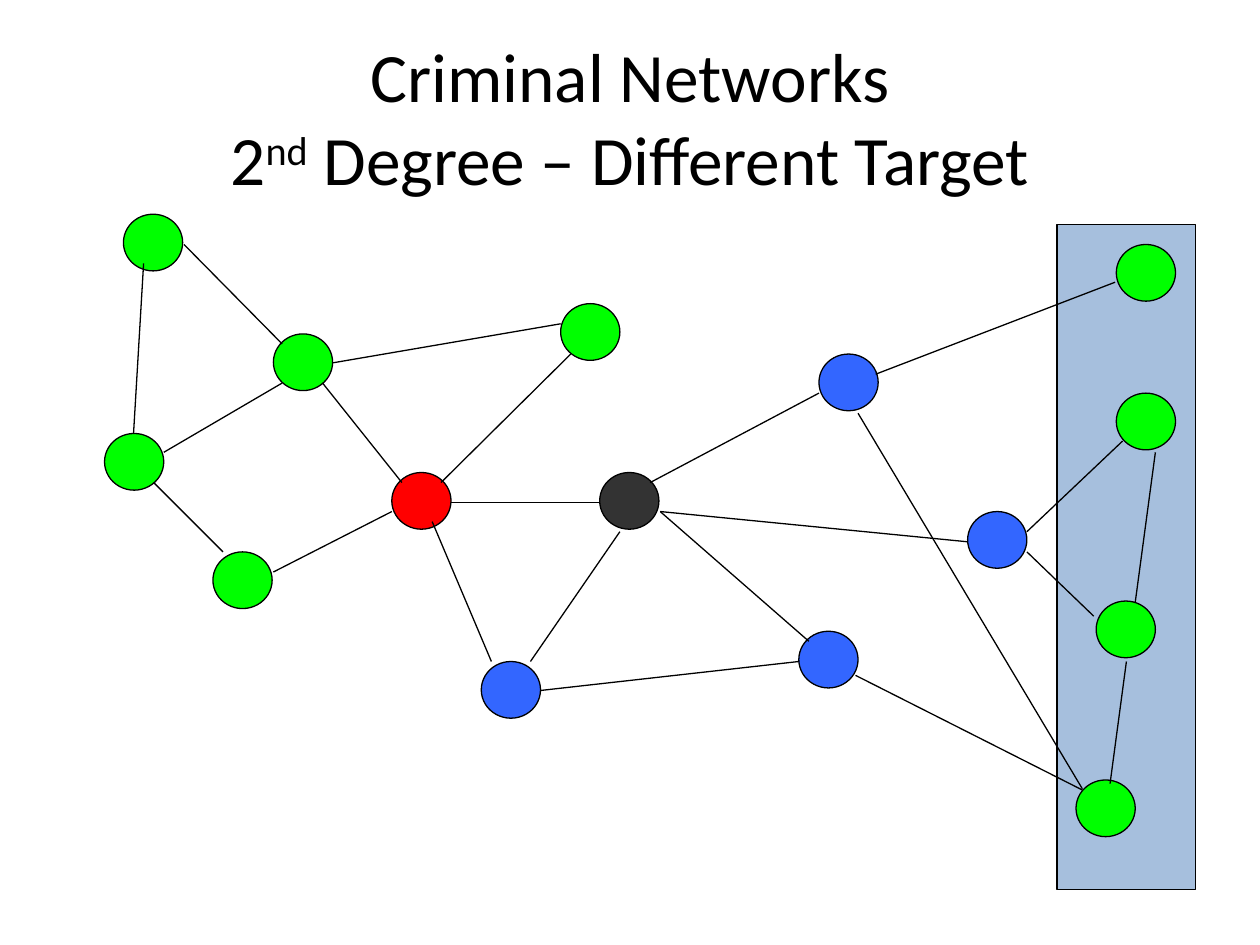
import pptx
import pptx.dml.color
import pptx.enum.shapes
import pptx.enum.text
import pptx.oxml.ns
import pptx.oxml.xmlchemy
import pptx.util
from pptx.util import Inches

BLACK, GREEN, BLUE, RED, CHARCOAL = "000000", "00FF00", "3366FF", "FF0000", "333333"
PANEL_BLUE = "4F81BD"
NODE_WIDTH, NODE_HEIGHT = 0.47, 0.45

# Left and top of each node, from the corner of its box
CORE_NODES = {
    RED: [(2.61, 2.25)],
    CHARCOAL: [(4.26, 2.25)],
    GREEN: [(1.67, 1.15), (1.19, 2.88), (3.95, 0.91), (0.33, 1.94), (0.48, 0.2)],
    BLUE: [(3.32, 3.75), (7.18, 2.56), (5.84, 3.51), (6, 1.31)],
}
TARGET_NODES = {GREEN: [(0.47, 0.16), (0.47, 1.34), (0.31, 2.99), (0.15, 4.41)]}

# Start x, start y, end x, end y, from the corner of the network box
CORE_LINKS = [
    (2.69, 2.33, 2.06, 1.54), (3, 2.33, 4.03, 1.31), (3.08, 2.49, 4.26, 2.49),
    (2.93, 2.64, 3.4, 3.75), (2.61, 2.56, 1.67, 3.04), (4.42, 2.72, 3.71, 3.75),
    (3.95, 1.07, 2.14, 1.38), (1.27, 2.88, 0.72, 2.33), (1.74, 1.54, 0.8, 2.09),
    (0.56, 1.94, 0.64, 0.59), (0.96, 0.44, 1.74, 1.23), (3.79, 3.98, 5.84, 3.75),
    (4.66, 2.33, 6, 1.62), (4.74, 2.56, 5.92, 3.59), (4.74, 2.56, 7.18, 2.8),
]
TARGET_LINKS = [
    (6.45, 1.47, 8.35, 0.74), (7.65, 2.72, 8.41, 2), (7.65, 2.88, 8.18, 3.39),
    (6.29, 3.86, 8.09, 4.77), (6.31, 1.78, 8.09, 4.76), (8.67, 2.09, 8.51, 3.28),
    (8.44, 3.75, 8.31, 4.72),
]


def color(hex_string):
    return pptx.dml.color.RGBColor.from_string(hex_string)


def style_line(line):
    line.color.rgb = color(BLACK)
    line.width = pptx.util.Pt(0.75)


def add_filled_shape(slide, kind, left, top, width, height, fill):
    shape = slide.shapes.add_shape(
        kind, Inches(left), Inches(top), Inches(width), Inches(height))
    shape.shadow.inherit = False
    shape.fill.solid()
    shape.fill.fore_color.rgb = color(fill)
    style_line(shape.line)
    return shape


def add_nodes(slide, left, top, nodes):
    for fill, places in nodes.items():
        for x, y in places:
            add_filled_shape(slide, pptx.enum.shapes.MSO_SHAPE.OVAL, left + x, top + y,
                             NODE_WIDTH, NODE_HEIGHT, fill)


def add_links(slide, left, top, links):
    for x1, y1, x2, y2 in links:
        connector = slide.shapes.add_connector(
            pptx.enum.shapes.MSO_CONNECTOR.STRAIGHT,
            Inches(left + x1), Inches(top + y1), Inches(left + x2), Inches(top + y2))
        style_line(connector.line)
        properties = connector._element.spPr
        properties.append(pptx.oxml.xmlchemy.OxmlElement("a:effectLst"))


def add_title(slide, left, top, width, height):
    title = slide.shapes.title
    title.left, title.top = Inches(left), Inches(top)
    title.width, title.height = Inches(width), Inches(height)
    text_frame = title.text_frame
    text_frame.word_wrap = True
    text_frame.vertical_anchor = pptx.enum.text.MSO_ANCHOR.MIDDLE
    text_frame.text = "Criminal Networks\v2"
    paragraph = text_frame.paragraphs[0]
    paragraph.alignment = pptx.enum.text.PP_ALIGN.CENTER
    ordinal = paragraph.add_run()
    ordinal.text = "nd"
    paragraph.add_run().text = " Degree – Different Target"
    for run in paragraph.runs:
        run.font.name = "Calibri"
        run.font.size = pptx.util.Pt(39.6)
        run.font.color.rgb = color(BLACK)
    ordinal.font._element.set("baseline", "30000")


def add_target_panel(slide, left, top, width, height):
    panel = add_filled_shape(slide, pptx.enum.shapes.MSO_SHAPE.RECTANGLE,
                             left, top, width, height, PANEL_BLUE)
    alpha = pptx.oxml.xmlchemy.OxmlElement("a:alpha")
    alpha.set("val", "50000")
    fill = panel._element.spPr.find(pptx.oxml.ns.qn("a:solidFill"))
    fill[0].append(alpha)
    add_nodes(slide, left, top, TARGET_NODES)


def add_network(slide, left, top):
    add_nodes(slide, left, top, CORE_NODES)
    add_links(slide, left, top, CORE_LINKS)
    add_target_panel(slide, left + 7.89, top + 0.28, 1.1, 5.28)
    add_links(slide, left, top, TARGET_LINKS)


def main():
    presentation = pptx.Presentation()
    presentation.slide_width, presentation.slide_height = Inches(10), Inches(7.5)
    title_only = presentation.slide_layouts[5]
    slide = presentation.slides.add_slide(title_only)
    add_title(slide, 0.5, 0.3, 9, 1.25)
    add_network(slide, 0.5, 1.5)
    presentation.save("out.pptx")


if __name__ == "__main__":
    main()
